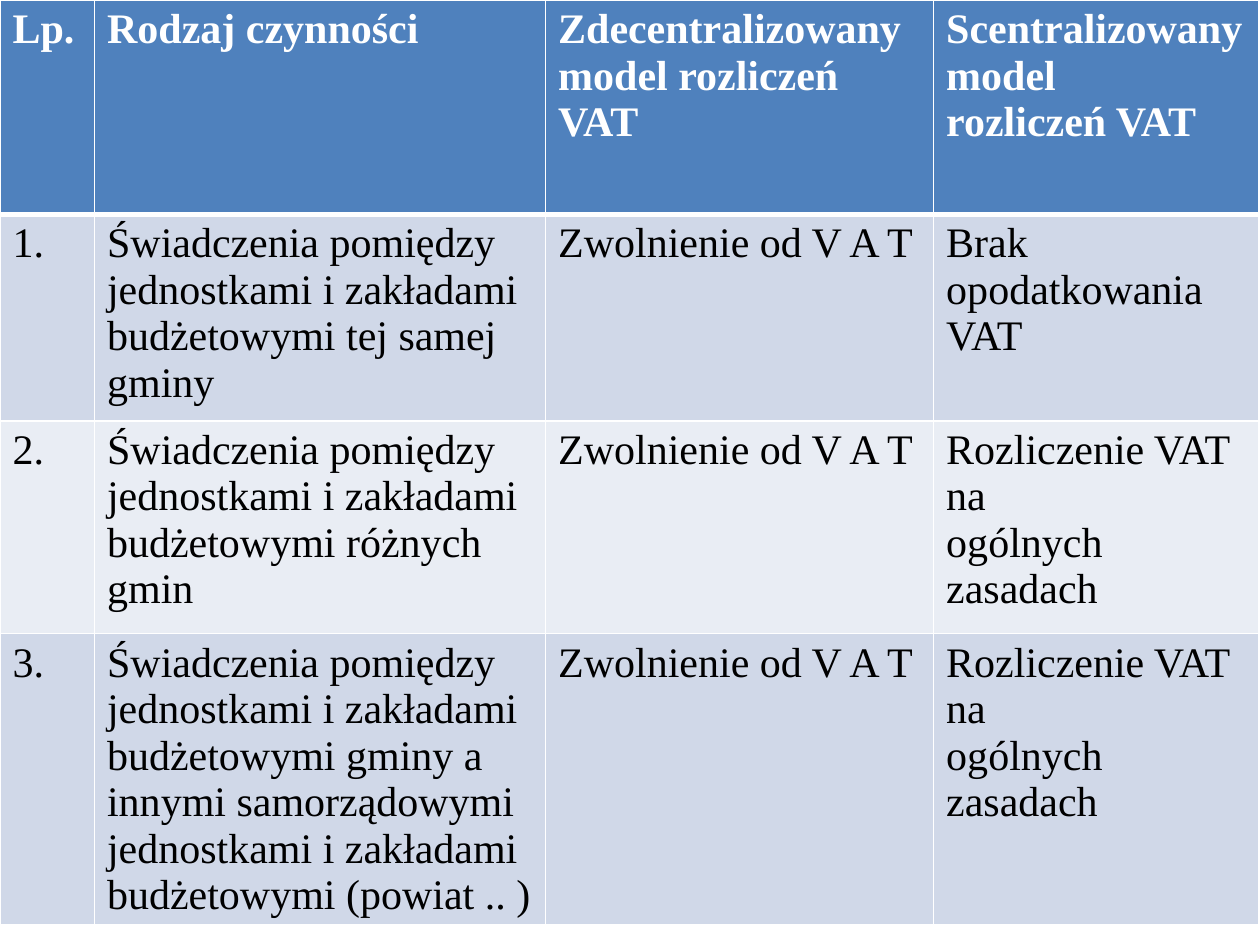
from dataclasses import dataclass

from lxml import etree
from pptx import Presentation
from pptx.dml.color import RGBColor
from pptx.oxml.ns import qn
from pptx.util import Inches, Pt


@dataclass(frozen=True)
class Theme:
    font: str = "Times New Roman"
    size: int = 24
    header_fill: str = "4F81BD"
    header_text: str = "FFFFFF"
    body_text: str = "000000"
    bands: tuple = ("D0D8E8", "E9EDF4")
    border: str = "FFFFFF"
    thin: int = 1
    thick: int = 3


THEME = Theme()
COLUMN_WIDTHS = (0.75, 3.58, 3.08, 2.58)
ROW_HEIGHTS = (1.7, 1.64, 1.69, 1.79)
UNITS = "Świadczenia pomiędzy jednostkami i zakładami"
EXEMPT = "Zwolnienie od V A T"
GENERAL_RULES = "Rozliczenie VAT na\nogólnych zasadach"
ROWS = (
    (
        "Lp.",
        "Rodzaj czynności",
        "Zdecentralizowany\nmodel rozliczeń VAT",
        "Scentralizowany model\nrozliczeń VAT",
    ),
    ("1.", f"{UNITS}\nbudżetowymi tej samej gminy", EXEMPT, "Brak opodatkowania VAT"),
    ("2.", f"{UNITS}\nbudżetowymi różnych gmin", EXEMPT, GENERAL_RULES),
    (
        "3.",
        f"{UNITS}\nbudżetowymi gminy a innymi samorządowymi\n"
        "jednostkami i zakładami budżetowymi (powiat .. )",
        EXEMPT,
        GENERAL_RULES,
    ),
)


def write_text(frame, text, *, color, bold=False, size=THEME.size, font=THEME.font):
    for index, line in enumerate(text.split("\n")):
        para = frame.paragraphs[0] if index == 0 else frame.add_paragraph()
        span = para.add_run()
        span.text = line
        span.font.name = font
        span.font.size = Pt(size)
        span.font.bold = bold
        span.font.color.rgb = RGBColor.from_string(color)


def set_borders(cell, widths):
    properties = cell._tc.get_or_add_tcPr()
    for side, width in widths.items():
        line = etree.SubElement(properties, qn(f"a:ln{side}"), w=str(Pt(width)))
        fill = etree.SubElement(line, qn("a:solidFill"))
        etree.SubElement(fill, qn("a:srgbClr"), val=THEME.border)


def style_cell(cell, text, row):
    is_header = row == 0
    set_borders(cell, {
        "L": THEME.thin,
        "R": THEME.thin,
        "T": THEME.thick if row == 1 else THEME.thin,
        "B": THEME.thick if is_header else THEME.thin,
    })
    fill = THEME.header_fill if is_header else THEME.bands[(row - 1) % 2]
    cell.fill.solid()
    cell.fill.fore_color.rgb = RGBColor.from_string(fill)
    color = THEME.header_text if is_header else THEME.body_text
    write_text(cell.text_frame, text, color=color, bold=is_header)


def add_vat_table(page, left, top, width, height):
    table = page.shapes.add_table(
        len(ROWS), len(COLUMN_WIDTHS), left, top, width, height
    ).table
    for column, column_width in zip(table.columns, COLUMN_WIDTHS):
        column.width = Inches(column_width)
    for row, row_height in zip(table.rows, ROW_HEIGHTS):
        row.height = Inches(row_height)
    for row, texts in enumerate(ROWS):
        for column, text in enumerate(texts):
            style_cell(table.cell(row, column), text, row)


def main():
    deck = Presentation()
    deck.slide_width = Inches(10)
    deck.slide_height = Inches(7.5)
    page = deck.slides.add_slide(deck.slide_layouts[6])
    add_vat_table(page, Inches(0), Inches(0), Inches(10), Inches(7.6))
    deck.save("out.pptx")


if __name__ == "__main__":
    main()
